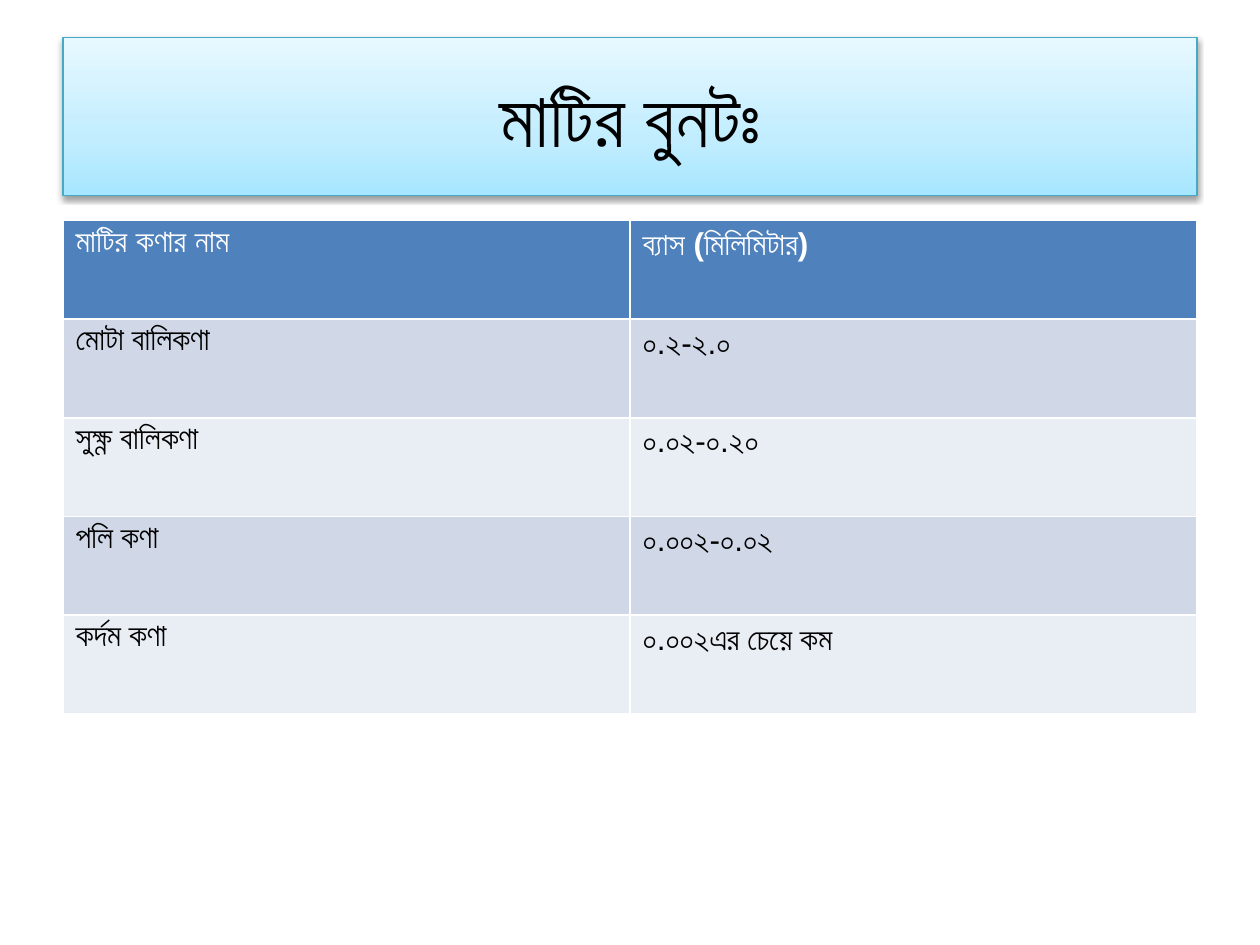
import pptx
import pptx.util
import pptx.dml.color
import pptx.enum.text
import pptx.oxml

Pt = pptx.util.Pt
RGB = pptx.dml.color.RGBColor
TITLE = "মাটির বুনটঃ"
ROWS = [
    ("মাটির কণার নাম", "ব্যাস (মিলিমিটার)"),
    ("মোটা বালিকণা", "০.২-২.০"),
    ("সুক্ষ্ণ বালিকণা", "০.০২-০.২০"),
    ("পলি কণা", "০.০০২-০.০২"),
    ("কর্দম কণা", "০.০০২এর চেয়ে কম"),
]
HEX = {
    "head": "4F81BD", "odd": "D0D8E8", "even": "E9EDF4",
    "edge": "46AAC5", "black": "000000", "white": "FFFFFF",
}
STOPS = [(0, "A7E6FF"), (35, "C1EDFF"), (100, "E7F8FF")]
LEFT, WIDTH = 36, 648
TOP, HIGH = 126, 56.4
NS = 'xmlns:a="http://schemas.openxmlformats.org/drawingml/2006/main"'


def write(frame, text, size=18, font="Arial", color="black", bold=False, align=None):
    para = frame.paragraphs[0]
    para.alignment = align
    run = para.add_run()
    run.text = text
    run.font.size = Pt(size)
    run.font.name = font
    run.font.bold = bold
    run.font.color.rgb = RGB.from_string(HEX[color])


def shade(shape):
    shape.fill.gradient()
    shape.fill.gradient_angle = 90
    stops = shape._element.spPr.find(".//{*}gsLst")
    for stop in list(stops):
        stops.remove(stop)
    for place, color in STOPS:
        stops.append(pptx.oxml.parse_xml(
            f'<a:gs {NS} pos="{place * 1000}"><a:srgbClr val="{color}"/></a:gs>'))
    shape.line.color.rgb = RGB.from_string(HEX["edge"])
    shape.line.width = Pt(0.75)
    shape.shadow.inherit = False
    shape._element.spPr.find("{*}effectLst").append(pptx.oxml.parse_xml(
        f'<a:outerShdw {NS} blurRad="{Pt(3.1)}" dist="{Pt(1.6)}" dir="5400000" '
        f'rotWithShape="0"><a:srgbClr val="{HEX["black"]}">'
        '<a:alpha val="38000"/></a:srgbClr></a:outerShdw>'))


def main():
    """Build the soil texture slide."""
    deck = pptx.Presentation()
    deck.slide_width, deck.slide_height = Pt(720), Pt(540)
    slide = deck.slides.add_slide(deck.slide_layouts[5])

    title = slide.shapes.title
    title.left, title.top = Pt(LEFT), Pt(21.6)
    title.width, title.height = Pt(WIDTH), Pt(90)
    shade(title)
    title.text_frame.vertical_anchor = pptx.enum.text.MSO_ANCHOR.MIDDLE
    write(title.text_frame, TITLE, size=44, font="Calibri",
          align=pptx.enum.text.PP_ALIGN.CENTER)

    grid = slide.shapes.add_table(
        len(ROWS), len(ROWS[0]), Pt(LEFT), Pt(TOP), Pt(WIDTH), Pt(HIGH * len(ROWS))).table
    for r, row in enumerate(ROWS):
        grid.rows[r].height = Pt(HIGH)
        head = r == 0
        band = "head" if head else "odd" if r % 2 else "even"
        for c, text in enumerate(row):
            cell = grid.cell(r, c)
            cell.fill.solid()
            cell.fill.fore_color.rgb = RGB.from_string(HEX[band])
            write(cell.text_frame, text, color="white" if head else "black", bold=head)

    deck.save("out.pptx")


if __name__ == "__main__":
    main()
